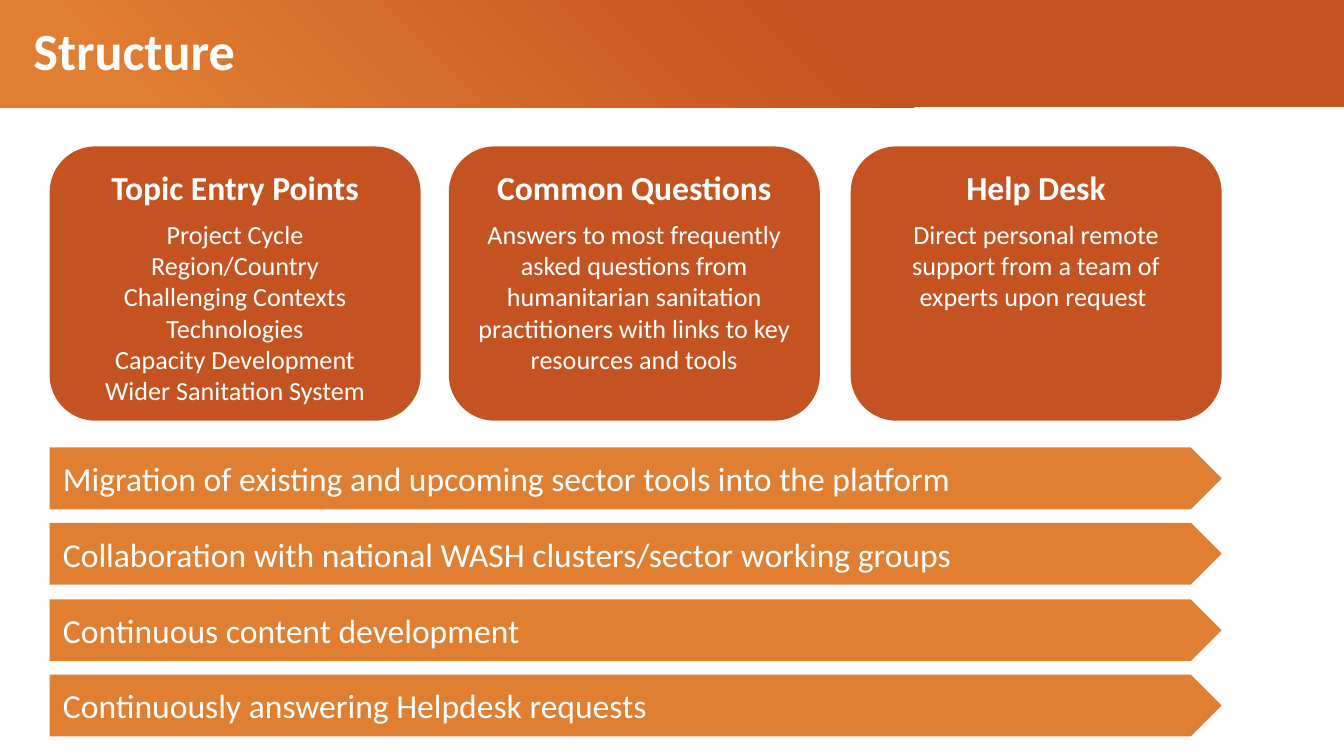
from lxml import etree
from pptx import Presentation
from pptx.dml.color import RGBColor
from pptx.enum.shapes import MSO_SHAPE
from pptx.enum.text import MSO_ANCHOR, PP_ALIGN
from pptx.oxml.ns import qn
from pptx.util import Inches, Pt

BAND = MSO_SHAPE.ROUND_2_SAME_RECTANGLE
CARD = MSO_SHAPE.ROUNDED_RECTANGLE
ARROW = MSO_SHAPE.RIGHT_ARROW
TOP, MIDDLE = MSO_ANCHOR.TOP, MSO_ANCHOR.MIDDLE
LEFT, CENTER = PP_ALIGN.LEFT, PP_ALIGN.CENTER

RUST = RGBColor(0xC5, 0x53, 0x21)
ORANGE = RGBColor(0xE0, 0x7E, 0x32)
WHITE = RGBColor(0xFF, 0xFF, 0xFF)

STOPS = [(0, RUST), (37, RUST), (91, ORANGE), (98, ORANGE)]
CARDS = [
    (0.37, "Topic Entry Points", [
        "Project Cycle", "Region/Country", "Challenging Contexts",
        "Technologies", "Capacity Development", "Wider Sanitation System"]),
    (3.34, "Common Questions", [
        "Answers to most frequently asked questions from humanitarian "
        "sanitation practitioners with links to key resources and tools"]),
    (6.33, "Help Desk", [
        "Direct personal remote support from a team of experts upon request "]),
]
TASKS = [
    "Migration of existing and upcoming sector tools into the platform",
    "Collaboration with national WASH clusters/sector working groups",
    "Continuous content development",
    "Continuously answering Helpdesk requests",
]


def add_block(kind, x, y, w, h, color=None):
    shape = slide.shapes.add_shape(
        kind, Inches(x), Inches(y), Inches(w), Inches(h))
    shape.shadow.inherit = False
    shape.line.fill.background()
    if color is not None:
        shape.fill.solid()
        shape.fill.fore_color.rgb = color
    return shape


def write(frame, lines, anchor, align):
    """Fill the frame with lines given as (text, size, bold)."""
    frame.word_wrap = True
    frame.vertical_anchor = anchor
    for i, (text, size, bold) in enumerate(lines):
        para = frame.paragraphs[0] if i == 0 else frame.add_paragraph()
        para.text = text
        para.alignment = align
        font = para.font
        font.name, font.size, font.bold = "Calibri", Pt(size), bold
        font.color.rgb = WHITE


prs = Presentation()
prs.slide_width, prs.slide_height = Inches(10), Inches(10) * 9 // 16
slide = prs.slides.add_slide(prs.slide_layouts[6])

# Header band, turned on its side so the gradient runs across the slide
band = add_block(BAND, 4.6, -4.6, 0.8, 10)
band.rotation = 90
band.adjustments[0] = 0
band.fill.gradient()
band.fill.gradient_angle = 315
stops = band.fill._fill._gradFill.find(qn("a:gsLst"))
for old in list(stops):
    stops.remove(old)
for pos, color in STOPS:
    stop = etree.SubElement(stops, qn("a:gs"), pos=str(pos * 1000))
    etree.SubElement(stop, qn("a:srgbClr"), val=str(color))

title = slide.shapes.add_textbox(
    Inches(0.15), Inches(0), Inches(6.91), Inches(0.8)).text_frame
write(title, [("Structure", 28, True)], MIDDLE, LEFT)
title.paragraphs[0].line_spacing = 0.9

for x, head, body in CARDS:
    frame = add_block(CARD, x, 1.09, 2.76, 2.04, RUST).text_frame
    lines = [(head, 18, True)] + [(text, 14, False) for text in body]
    write(frame, lines, TOP, CENTER)
    frame.paragraphs[0].space_after = Pt(6)

for i, task in enumerate(TASKS):
    y = round(3.33 + 0.563 * i, 2)
    arrow = add_block(ARROW, 0.37, y, 8.72, 0.46, ORANGE)
    arrow.adjustments[0] = 1
    arrow.adjustments[1] = 0.5
    write(arrow.text_frame, [(task, 18, False)], MIDDLE, LEFT)

prs.save("out.pptx")
